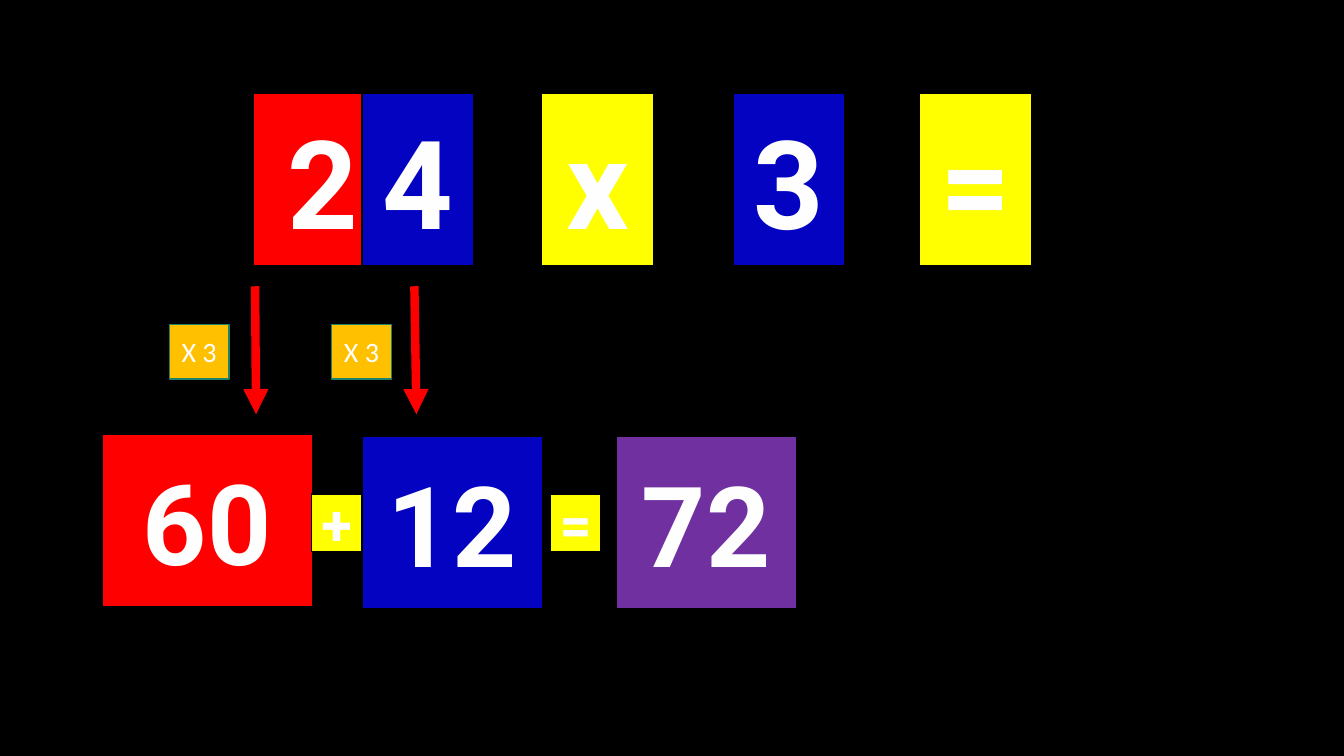
from lxml.etree import SubElement
from pptx import Presentation
from pptx.dml.color import RGBColor
from pptx.enum.shapes import MSO_CONNECTOR, MSO_SHAPE
from pptx.enum.text import MSO_ANCHOR, PP_ALIGN
from pptx.oxml import parse_xml
from pptx.oxml.ns import nsdecls, qn
from pptx.util import Inches, Pt

COLORS = {
    "black": "000000", "red": "FF0000", "blue": "0303C1", "yellow": "FFFF00",
    "purple": "7030A0", "orange": "FFC000", "green": "1E8168",
    "outline": "29AF8C", "digit": "FEFEFE", "white": "FFFFFF",
}

# Tile styles: height, line colour, outlined text, font format
DIGIT = {"name": "Roboto", "bold": True, "color": "digit"}
STYLES = {
    "problem": (1.71, "black", True, {**DIGIT, "size": 88}),
    "product": (1.71, "black", True, {**DIGIT, "size": 80}),
    "sign": (0.57, "black", True, {**DIGIT, "size": 40}),
    "factor": (0.54, "green", False,
               {"name": "Calibri", "bold": False, "color": "white", "size": 20}),
}

# Tiles from back to front: text, style, fill, left, top, width
PROBLEM_TOP, PRODUCT_TOP, SIGN_TOP, FACTOR_TOP = 0.93, 4.33, 4.9, 3.22
TILES = [
    ("20", "problem", "red", 2.51, PROBLEM_TOP, 2.09),
    ("4", "problem", "blue", 3.59, PROBLEM_TOP, 1.11),
    ("x", "problem", "yellow", 5.37, PROBLEM_TOP, 1.11),
    ("3", "problem", "blue", 7.27, PROBLEM_TOP, 1.11),
    ("=", "problem", "yellow", 9.12, PROBLEM_TOP, 1.11),
    ("60", "product", "red", 1.01, 4.31, 2.09),
    ("12", "product", "blue", 3.59, PRODUCT_TOP, 1.79),
    ("X 3", "factor", "orange", 1.68, FACTOR_TOP, 0.59),
    ("X 3", "factor", "orange", 3.29, FACTOR_TOP, 0.59),
    ("+", "sign", "yellow", 3.09, SIGN_TOP, 0.5),
    ("=", "sign", "yellow", 5.46, SIGN_TOP, 0.5),
    ("72", "product", "purple", 6.11, PRODUCT_TOP, 1.79),
]

# Arrows: start x, end x
ARROWS = [(2.53, 2.54), (4.11, 4.13)]
ARROW_TOP, ARROW_BOTTOM = 2.84, 4.11


def rgb(name):
    return RGBColor.from_string(COLORS[name])


def outline_text(r):
    rPr = r._r.get_or_add_rPr()
    rPr.set("spc", "50")
    rPr.insert(0, parse_xml(
        f'<a:ln {nsdecls("a")} w="9525"><a:solidFill>'
        f'<a:srgbClr val="{COLORS["outline"]}"/></a:solidFill></a:ln>'))


def add_tile(s, text, style, fill, left, top, width):
    height, line, outlined, font = STYLES[style]
    sp = s.shapes.add_shape(MSO_SHAPE.RECTANGLE, Inches(left), Inches(top),
                            Inches(width), Inches(height))
    sp.shadow.inherit = False
    sp.fill.solid()
    sp.fill.fore_color.rgb = rgb(fill)
    sp.line.color.rgb = rgb(line)
    sp.line.width = Pt(1)
    tf = sp.text_frame
    frame = {"word_wrap": True, "vertical_anchor": MSO_ANCHOR.MIDDLE,
             "margin_left": 0, "margin_right": 0}
    for key, value in frame.items():
        setattr(tf, key, value)
    p = tf.paragraphs[0]
    p.alignment = PP_ALIGN.CENTER
    r = p.add_run()
    r.text = text
    for key, value in font.items():
        if key == "color":
            r.font.color.rgb = rgb(value)
        else:
            setattr(r.font, key, Pt(value) if key == "size" else value)
    if outlined:
        outline_text(r)


def add_arrow(s, x1, x2):
    cn = s.shapes.add_connector(MSO_CONNECTOR.STRAIGHT, Inches(x1), Inches(ARROW_TOP),
                                Inches(x2), Inches(ARROW_BOTTOM))
    cn.line.color.rgb = rgb("red")
    cn.line.width = Pt(6)
    SubElement(cn.line._get_or_add_ln(), qn("a:tailEnd"), type="triangle")
    SubElement(cn._element.spPr, qn("a:effectLst"))


def main():
    prs = Presentation()
    prs.slide_width, prs.slide_height = Inches(13.33), Inches(7.5)
    s = prs.slides.add_slide(prs.slide_layouts[6])
    s.background.fill.solid()
    s.background.fill.fore_color.rgb = rgb("black")

    # Multiplication tiles, partial products and sum
    for tile in TILES:
        add_tile(s, *tile)

    # Arrows from each digit to its product
    for arrow in ARROWS:
        add_arrow(s, *arrow)

    prs.save("out.pptx")


if __name__ == "__main__":
    main()
